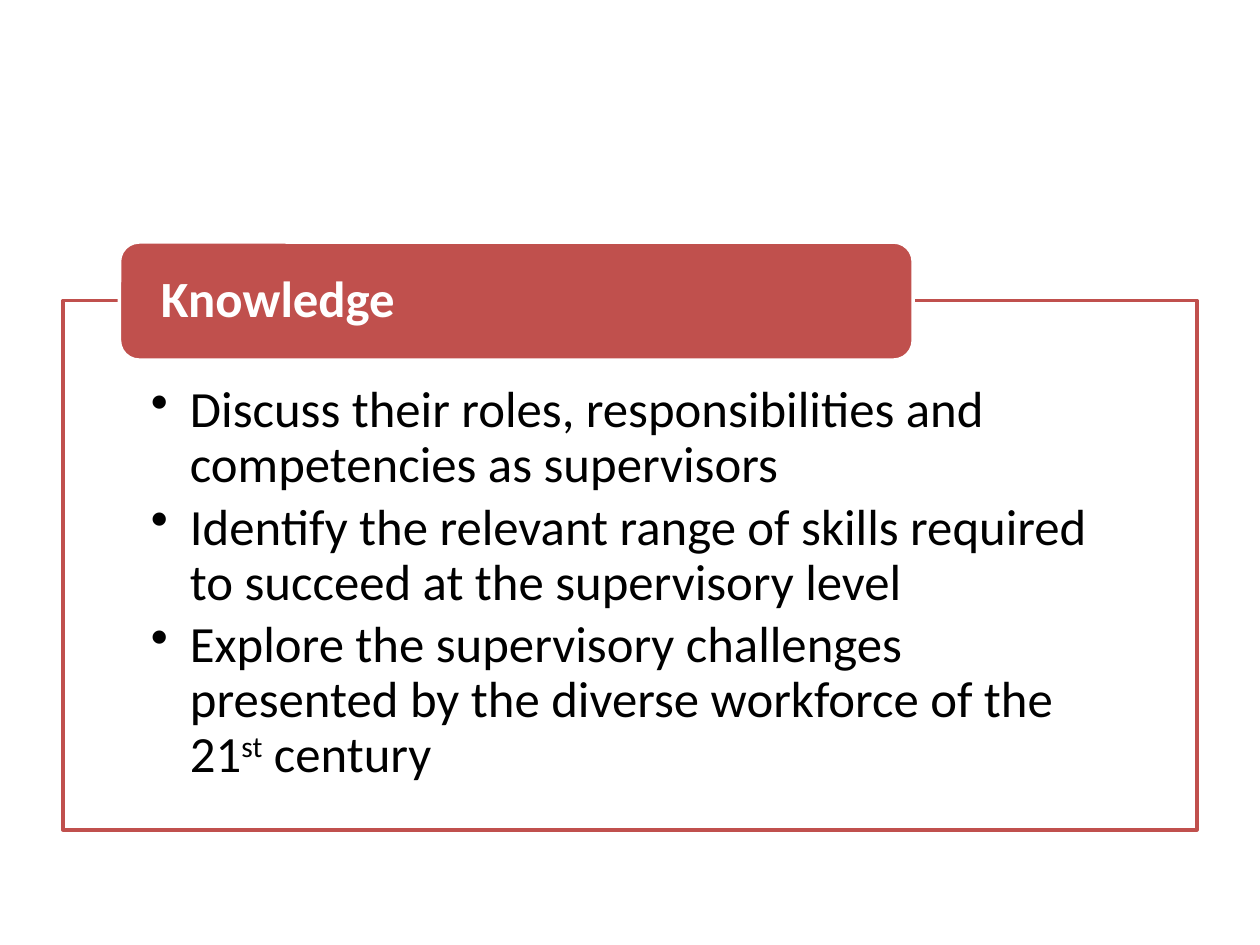
from dataclasses import dataclass

from lxml import etree
from pptx import Presentation
from pptx.dml.color import RGBColor
from pptx.enum.shapes import MSO_SHAPE
from pptx.enum.text import MSO_ANCHOR, PP_ALIGN
from pptx.oxml.ns import qn
from pptx.util import Cm, Pt

RECTANGLE = MSO_SHAPE.RECTANGLE
ROUNDED = MSO_SHAPE.ROUNDED_RECTANGLE
TOP, MIDDLE = MSO_ANCHOR.TOP, MSO_ANCHOR.MIDDLE
LEFT = PP_ALIGN.LEFT


@dataclass(frozen=True)
class Theme:
    font: str = "Calibri"
    size: Pt = Pt(29)
    accent: RGBColor = RGBColor(0xC0, 0x50, 0x4D)
    white: RGBColor = RGBColor(0xFF, 0xFF, 0xFF)
    black: RGBColor = RGBColor(0, 0, 0)


THEME = Theme()


def add_panel(slide, preset, box, fill, line, insets, anchor):
    shape = slide.shapes.add_shape(preset, *[Cm(length) for length in box])
    shape.shadow.inherit = False
    shape.fill.solid()
    shape.fill.fore_color.rgb = fill
    shape.line.color.rgb = line
    shape.line.width = Pt(2)
    frame = shape.text_frame
    frame.word_wrap = True
    frame.vertical_anchor = anchor
    frame.margin_left, frame.margin_top, frame.margin_right, frame.margin_bottom = [
        Cm(length) for length in insets]
    return shape


def add_run(paragraph, text, color, bold=False):
    paragraph.alignment = LEFT
    paragraph.line_spacing = 0.9
    run = paragraph.add_run()
    run.text = text
    run.font.name = THEME.font
    run.font.size = THEME.size
    run.font.bold = bold
    run.font.color.rgb = color
    return run


presentation = Presentation()
presentation.slide_width = Cm(25.4)
presentation.slide_height = Cm(19.05)
slide = presentation.slides.add_slide(presentation.slide_layouts[6])

# Outlined panel with a slightly transparent fill
panel = add_panel(slide, RECTANGLE, (1.27, 6.06, 22.86, 10.67),
                  THEME.white, THEME.accent, (1.77, 1.68, 1.77, 0.58), TOP)
fill_color = panel.fill._xPr.find(qn("a:solidFill"))[0]
etree.SubElement(fill_color, qn("a:alpha")).set("val", "90000")

# Bulleted objectives, each a list of (text, superscript) parts
objectives = [
    [("Discuss their roles, responsibilities and competencies as supervisors", False)],
    [("Identify the relevant range of skills required to succeed at the "
      "supervisory level", False)],
    [("Explore the supervisory challenges presented by the diverse workforce "
      "of the 21", False), ("st", True), (" century", False)],
]
for index, parts in enumerate(objectives):
    frame = panel.text_frame
    paragraph = frame.add_paragraph() if index else frame.paragraphs[0]
    paragraph.level = 1
    properties = paragraph._p.get_or_add_pPr()
    properties.set("marL", str(Cm(0.79)))
    properties.set("indent", str(-Cm(0.79)))
    etree.SubElement(properties, qn("a:buChar")).set("char", "•")
    paragraph.space_after = Pt(4.5)
    for text, superscript in parts:
        run = add_run(paragraph, text, THEME.black)
        if superscript:
            run.font._element.set("baseline", "30000")

# Heading tab over the top edge
heading = add_panel(slide, ROUNDED, (2.41, 4.88, 16, 2.38),
                    THEME.accent, THEME.white, (0.72, 0, 0.72, 0), MIDDLE)
add_run(heading.text_frame.paragraphs[0], "Knowledge", THEME.white, bold=True)

presentation.save("out.pptx")
